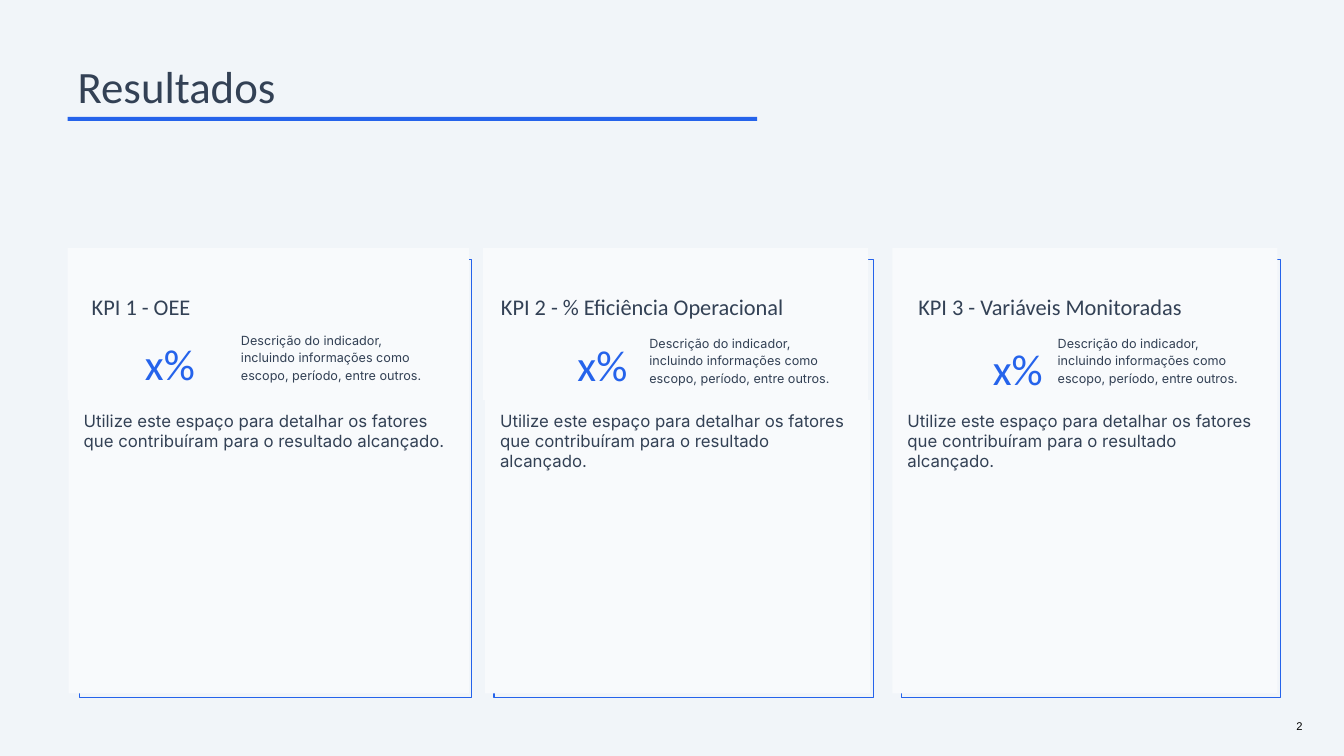
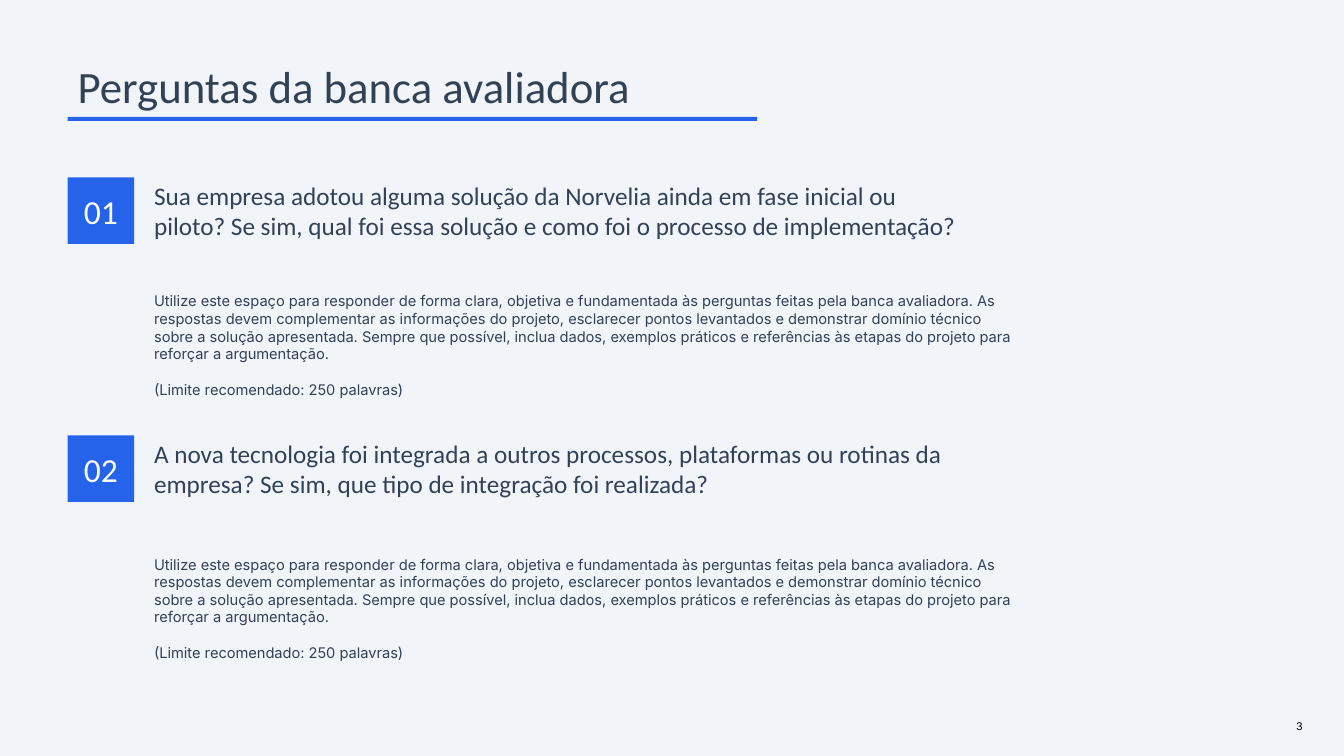
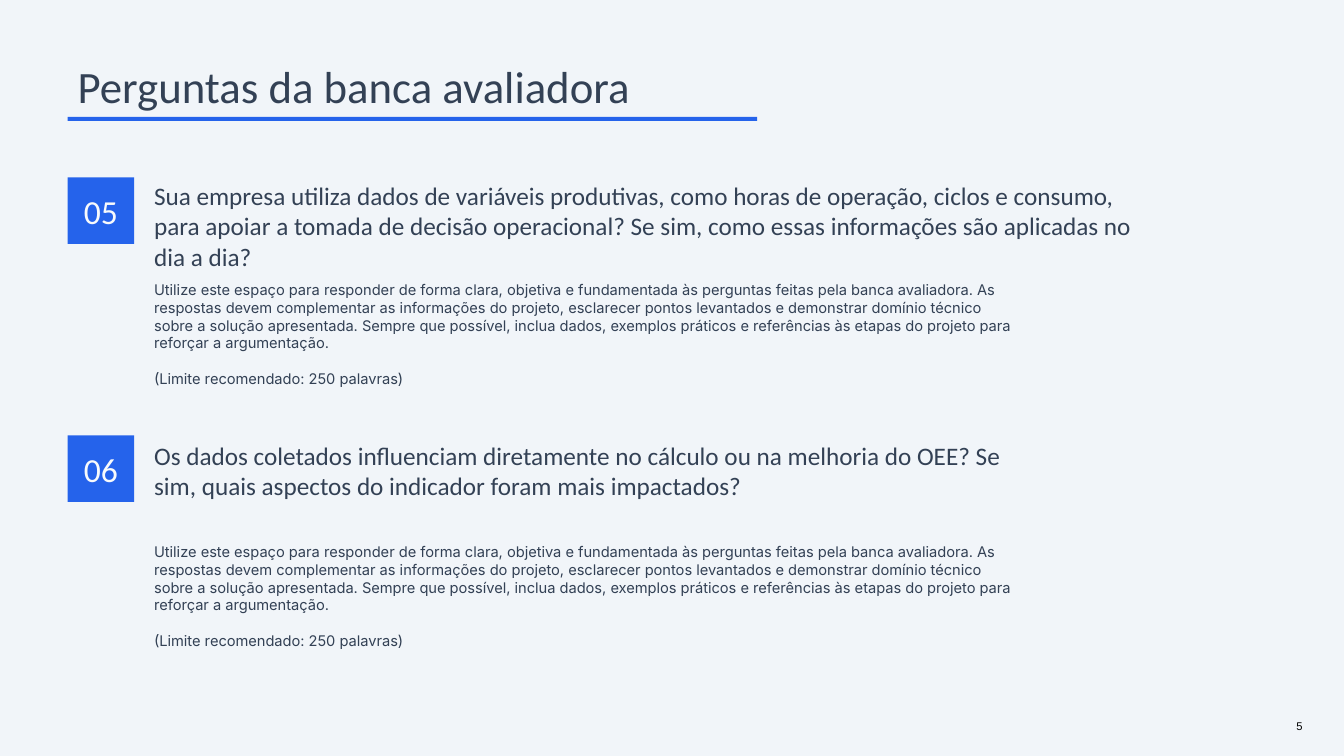
import pptx
import pptx.util
import pptx.dml.color
import pptx.enum.shapes
import pptx.enum.text

Inches, Pt = pptx.util.Inches, pptx.util.Pt
ANCHOR, ALIGN = pptx.enum.text.MSO_ANCHOR, pptx.enum.text.PP_ALIGN
RGB = pptx.dml.color.RGBColor.from_string

COLORS = {"bg": "F1F5F9", "panel": "F8FAFC", "blue": "2563EB", "text": "334155", "page": "000000"}
HEAD, BODY = "Calibri", "Inter"
LEFT = 0.67

DETAIL = "Utilize este espaço para detalhar os fatores que contribuíram para o resultado alcançado."
DESCRIPTION = "Descrição do indicador, incluindo informações como escopo, período, entre outros."
ANSWER = (
    "Utilize este espaço para responder de forma clara, objetiva e fundamentada às perguntas "
    "feitas pela banca avaliadora. As respostas devem complementar as informações do projeto, "
    "esclarecer pontos levantados e demonstrar domínio técnico sobre a solução apresentada. "
    "Sempre que possível, inclua dados, exemplos práticos e referências às etapas do projeto "
    "para reforçar a argumentação.\n(Limite recomendado: 250 palavras)"
)
JURY = "Perguntas da banca avaliadora"

# Card: name, name left, inset and width; x% box; description left and top; frame; top and bottom panels
CARDS = [
    {"name": "KPI 1 - OEE", "name_at": (0.91, 2.68, 3.48, 0.47), "name_inset": 0,
     "value_at": (0.68, 3.14, 1.35, 0.74), "description": (2.24, 3.28),
     "frame": (0.79, 3.89), "top": (0.67, 3.98), "bottom": (0.68, 3.97)},
    {"name": "KPI 2 - % Eficiência Operacional", "name_at": (4.87, 2.68, 3.82, 0.47), "name_inset": 0.1,
     "value_at": (4.81, 3.24, 1.51, 0.57), "description": (6.29, 3.31),
     "frame": (4.9, 3.76), "top": (4.79, 3.82), "bottom": (4.81, 3.82)},
    {"name": "KPI 3 - Variáveis Monitoradas", "name_at": (9.01, 2.68, 3.28, 0.47), "name_inset": 0.1,
     "value_at": (8.99, 3.24, 1.45, 0.65), "description": (10.34, 3.31),
     "frame": (8.94, 3.76), "top": (8.85, 3.82), "bottom": (8.85, 3.82)},
]

# Slide: page, title, questions as (number, text, top, width, answer top)
SLIDES = [
    ("2", "Resultados", []),
    ("3", JURY, [
        ("01", "Sua empresa adotou alguma solução da Norvelia ainda em fase inicial ou piloto? "
               "Se sim, qual foi essa solução e como foi o processo de implementação?", 1.69, 8.29, 2.8),
        ("02", "A nova tecnologia foi integrada a outros processos, plataformas ou rotinas da "
               "empresa? Se sim, que tipo de integração foi realizada?", 4.25, 8.76, 5.41),
    ]),
    ("5", JURY, [
        ("05", "Sua empresa utiliza dados de variáveis produtivas, como horas de operação, ciclos e "
               "consumo, para apoiar a tomada de decisão operacional? Se sim, como essas informações "
               "são aplicadas no dia a dia?", 1.69, 10.03, 2.69),
        ("06", "Os dados coletados influenciam diretamente no cálculo ou na melhoria do OEE? Se "
               "sim, quais aspectos do indicador foram mais impactados?", 4.27, 8.75, 5.29),
    ]),
]


def add_rect(s, at, fill=None, line=None):
    sp = s.shapes.add_shape(pptx.enum.shapes.MSO_SHAPE.RECTANGLE, *map(Inches, at))
    sp.shadow.inherit = False
    if fill:
        sp.fill.solid()
        sp.fill.fore_color.rgb = RGB(COLORS[fill])
    else:
        sp.fill.background()
    if line:
        sp.line.color.rgb = RGB(COLORS[line])
        sp.line.width = Pt(0.75)
    else:
        sp.line.fill.background()
    return sp


def write(sp, text, size, font=HEAD, color="text", inset=(0.1, 0.1, 0.1, 0.1),
          anchor=ANCHOR.TOP, align=ALIGN.LEFT, spacing=1.0, gap=0):
    tf = sp.text_frame
    tf.text = text
    tf.word_wrap = True
    tf.auto_size = pptx.enum.text.MSO_AUTO_SIZE.NONE
    tf.vertical_anchor = anchor
    tf.margin_left, tf.margin_top, tf.margin_right, tf.margin_bottom = map(Inches, inset)
    for i, p in enumerate(tf.paragraphs):
        p.alignment = align
        p.line_spacing = spacing
        p.space_before = Pt(gap if i else 0)
        for r in p.runs:
            r.font.size = Pt(size)
            r.font.name = font
            r.font.color.rgb = RGB(COLORS[color])


prs = pptx.Presentation()
prs.slide_width, prs.slide_height = Inches(13.33), Inches(7.5)
bg = prs.slide_master.background.fill
bg.solid()
bg.fore_color.rgb = RGB(COLORS["bg"])

for page, title, questions in SLIDES:
    s = prs.slides.add_slide(prs.slide_layouts[5])
    box = s.shapes.add_textbox

    # Title, rule and page number
    sp = s.shapes.title
    sp.left, sp.top, sp.width, sp.height = map(Inches, (LEFT, 0.48, 6.58, 0.74))
    write(sp, title, 32)
    add_rect(s, (LEFT, 1.16, 6.84, 0.04), fill="blue")
    write(box(*map(Inches, (11.84, 7.11, 1.08, 0.18))), page, 8, "Arial", "page",
          inset=(0, 0, 0, 0), anchor=ANCHOR.MIDDLE, align=ALIGN.RIGHT)

    # Numbered questions with answers
    for i, (number, question, top, width, answer_top) in enumerate(questions):
        badge = add_rect(s, (LEFT, 1.76 + i * 2.56, 0.66, 0.66), fill="blue")
        write(badge, number, 24, color="panel", anchor=ANCHOR.MIDDLE, align=ALIGN.CENTER)
        write(box(*map(Inches, (1.43, top, width, 0.81))), question, 18)
        write(box(*map(Inches, (1.43, answer_top, 8.76, 1.5))), ANSWER, 10.5, BODY, gap=12.7)

# KPI cards on the results slide
s = prs.slides[0]
box = s.shapes.add_textbox
for card in CARDS:
    frame_left, frame_width = card["frame"]
    top_left, top_width = card["top"]
    bottom_left, bottom_width = card["bottom"]
    add_rect(s, (frame_left, 2.57, frame_width, 4.35), line="blue")
    add_rect(s, (top_left, 2.46, top_width, 1.51), fill="panel")
    detail = add_rect(s, (bottom_left, 3.97, bottom_width, 2.91), fill="panel")
    write(detail, DETAIL, 12, BODY, inset=(0.15, 0.1, 0.15, 0.1))
    write(box(*map(Inches, card["name_at"])), card["name"], 16,
          inset=(card["name_inset"], 0.1, 0, 0.1), spacing=1.5)
    write(box(*map(Inches, card["value_at"])), "x%", 31, color="blue", inset=(0.15, 0.2, 0.1, 0.1),
          anchor=ANCHOR.MIDDLE, align=ALIGN.RIGHT, spacing=1.15)
    write(box(*map(Inches, (*card["description"], 2.21, 0.57))), DESCRIPTION, 9, BODY,
          inset=(0.15, 0, 0.1, 0), spacing=1.15)

prs.save("out.pptx")
